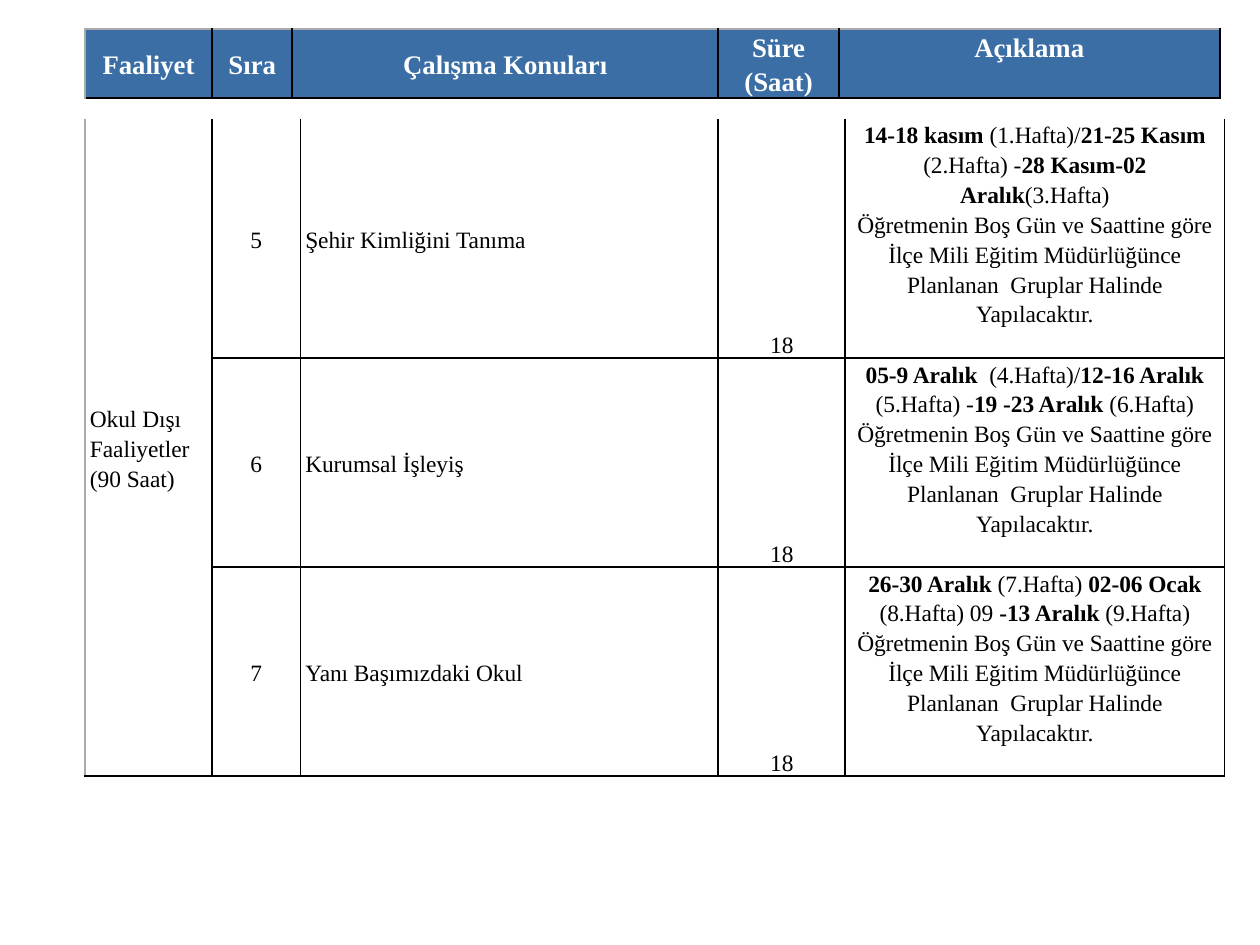
from lxml.etree import SubElement
from pptx import Presentation
from pptx.dml.color import RGBColor
from pptx.enum.text import MSO_ANCHOR, PP_ALIGN
from pptx.oxml.ns import qn
from pptx.util import Inches, Pt

WHITE = RGBColor(0xFF, 0xFF, 0xFF)
BLACK = RGBColor(0x00, 0x00, 0x00)
GRAY = RGBColor(0xAA, 0xAA, 0xAA)
BLUE = RGBColor(0x3A, 0x6E, 0xA5)
FONT = "Times New Roman"

TOP, MIDDLE, BOTTOM = MSO_ANCHOR.TOP, MSO_ANCHOR.MIDDLE, MSO_ANCHOR.BOTTOM
LEFT, CENTER = PP_ALIGN.LEFT, PP_ALIGN.CENTER

HEADINGS = [["Faaliyet"], ["Sıra"], ["Çalışma Konuları"], ["Süre", "(Saat)"], ["Açıklama"]]
ACTIVITY = ["Okul Dışı Faaliyetler", "(90 Saat)"]
HOURS = "18"
PLAN = ("Öğretmenin Boş Gün ve Saattine göre İlçe Mili Eğitim Müdürlüğünce "
        "Planlanan  Gruplar Halinde Yapılacaktır.")
# Order, topic, row height, and weeks as alternating bold and regular runs
TOPICS = [
    ("5", "Şehir Kimliğini Tanıma", 1.49,
     ["14-18 kasım ", "(1.Hafta)/", "21-25 Kasım ", "(2.Hafta) -",
      "28 Kasım-02 Aralık", "(3.Hafta)"]),
    ("6", "Kurumsal İşleyiş", 1.3,
     ["05-9 Aralık  ", "(4.Hafta)/", "12-16 Aralık ", "(5.Hafta) -",
      "19 -23 Aralık ", "(6.Hafta)"]),
    ("7", "Yanı Başımızdaki Okul", 1.3,
     ["26-30 Aralık ", "(7.Hafta) ", "02-06 Ocak ", "(8.Hafta) 09",
      " -13 Aralık ", "(9.Hafta)"]),
]


def add_grid(slide, left, top, widths, heights):
    """Add a table without banding, sized by its columns and rows."""
    table = slide.shapes.add_table(
        len(heights), len(widths), Inches(left), Inches(top),
        Inches(sum(widths)), Inches(sum(heights))).table
    table.first_row = table.horz_banding = False
    for column, width in zip(table.columns, widths):
        column.width = Inches(width)
    for row, height in zip(table.rows, heights):
        row.height = Inches(height)
    return table


def style_cell(cell, fill, inset, anchor, left=BLACK, top=BLACK):
    """Set borders, fill, margins and anchor; a None border is not drawn."""
    properties = cell._tc.get_or_add_tcPr()
    for side, color in (("L", left), ("R", BLACK), ("T", top), ("B", BLACK)):
        line = SubElement(properties, qn(f"a:ln{side}"), w=str(Pt(1)))
        if color is None:
            SubElement(line, qn("a:noFill"))
        else:
            solid = SubElement(line, qn("a:solidFill"))
            SubElement(solid, qn("a:srgbClr"), val=str(color))
    cell.fill.solid()
    cell.fill.fore_color.rgb = fill
    cell.margin_left = cell.margin_right = Inches(inset)
    cell.margin_top = cell.margin_bottom = 0
    cell.vertical_anchor = anchor


def write_cell(cell, paragraphs, align, size, color):
    """Write paragraphs, each a list of (text, bold) runs."""
    frame = cell.text_frame
    for index, runs in enumerate(paragraphs):
        paragraph = frame.add_paragraph() if index else frame.paragraphs[0]
        paragraph.alignment = align
        paragraph.line_spacing = 1.15
        for text, bold in runs:
            run = paragraph.add_run()
            run.text = text
            run.font.name = FONT
            run.font.size = Pt(size)
            run.font.bold = bold
            run.font.color.rgb = color


def add_header(slide, left, top):
    header = add_grid(slide, left, top, [0.79, 0.5, 2.65, 0.75, 2.37], [0.43])
    for index, lines in enumerate(HEADINGS):
        cell = header.cell(0, index)
        anchor = TOP if index == len(HEADINGS) - 1 else MIDDLE
        style_cell(cell, BLUE, 0.05, anchor, BLACK if index else GRAY, GRAY)
        write_cell(cell, [[(line, True)] for line in lines], CENTER, 12, WHITE)


def add_schedule(slide, left, top):
    schedule = add_grid(slide, left, top, [0.79, 0.55, 2.6, 0.79, 2.36],
                        [height for _, _, height, _ in TOPICS])
    activity = schedule.cell(0, 0)
    activity.merge(schedule.cell(len(TOPICS) - 1, 0))
    style_cell(activity, WHITE, 0.03, MIDDLE, GRAY, None)
    write_cell(activity, [[(line, False)] for line in ACTIVITY], LEFT, 10.5, BLACK)

    for row, (order, topic, _, weeks) in enumerate(TOPICS):
        week_runs = [(text, index % 2 == 0) for index, text in enumerate(weeks)]
        columns = [
            ([[(order, False)]], CENTER, MIDDLE),
            ([[(topic, False)]], LEFT, MIDDLE),
            ([[(HOURS, False)]], CENTER, BOTTOM),
            ([week_runs, [(PLAN, False)]], CENTER, TOP),
        ]
        for column, (paragraphs, align, anchor) in enumerate(columns, start=1):
            cell = schedule.cell(row, column)
            style_cell(cell, WHITE, 0.03, anchor, top=BLACK if row else None)
            write_cell(cell, paragraphs, align, 10.5, BLACK)


def main():
    presentation = Presentation()
    presentation.slide_width = Inches(7.84)
    presentation.slide_height = Inches(5.88)
    slide = presentation.slides.add_slide(presentation.slide_layouts[6])
    add_schedule(slide, 0.53, 0.74)
    add_header(slide, 0.53, 0.18)
    presentation.save("out.pptx")


if __name__ == "__main__":
    main()
